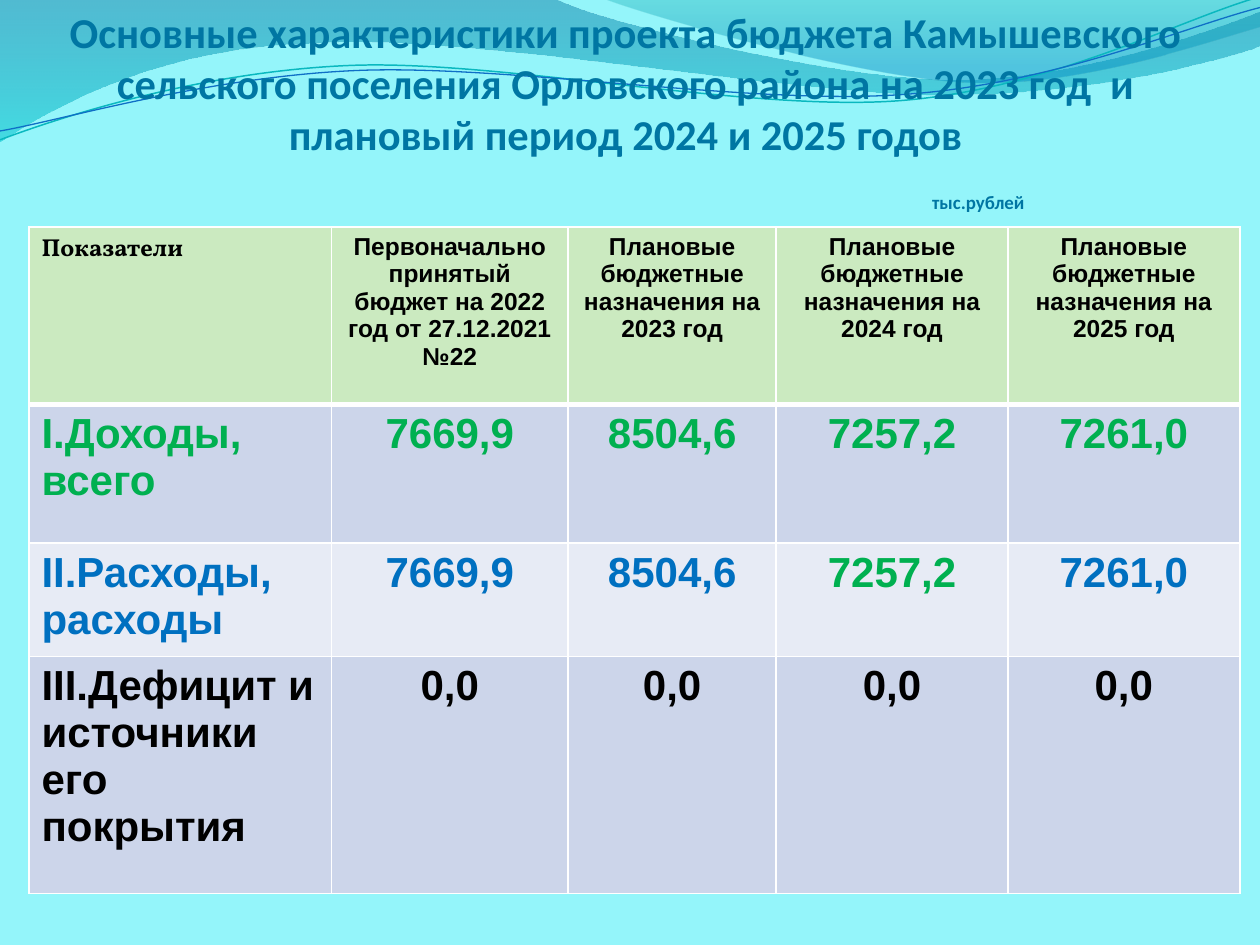
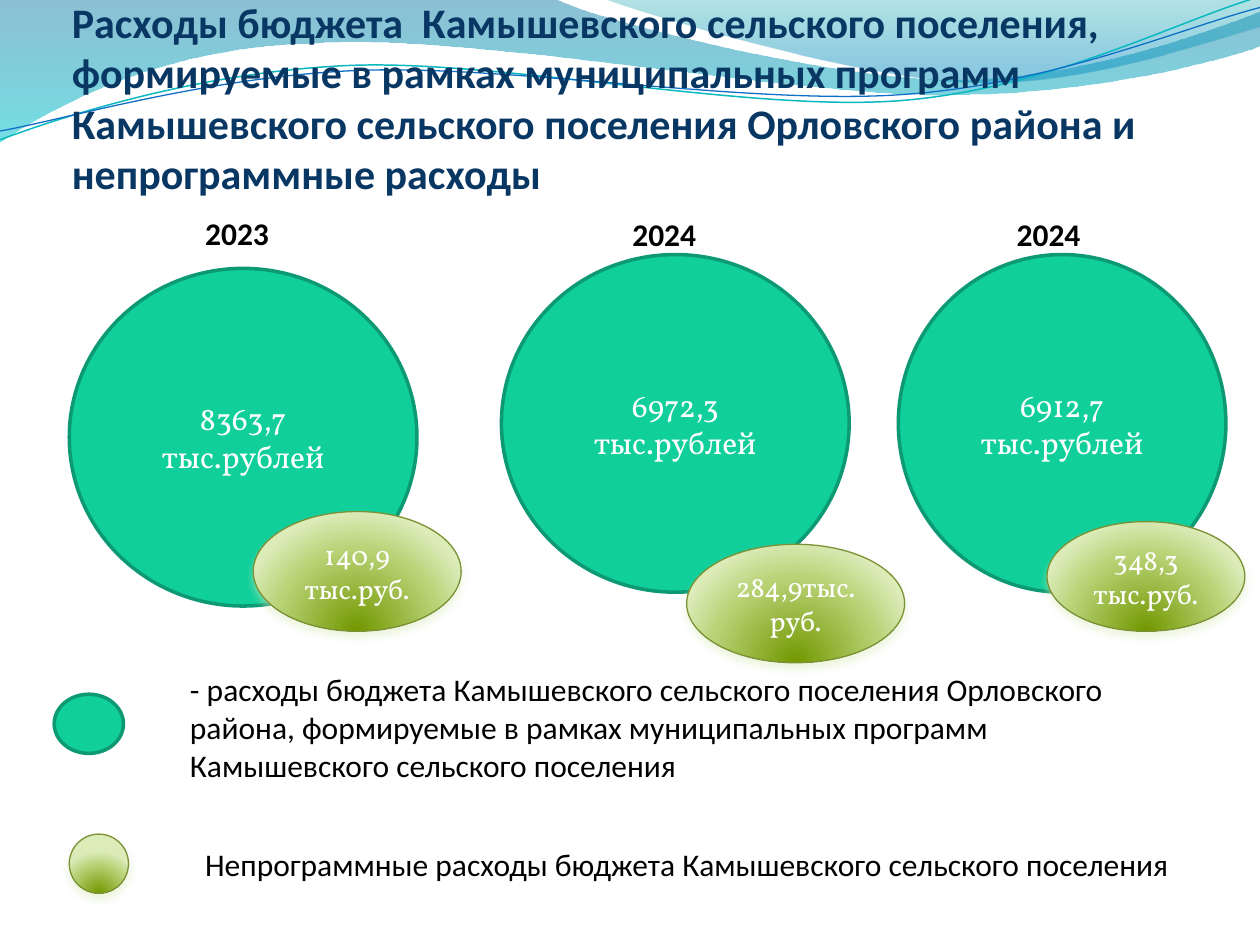
from math import cos, radians, sin

from pptx import Presentation
from pptx.dml.color import RGBColor as Rgb
from pptx.enum.shapes import MSO_SHAPE as Kind
from pptx.enum.text import MSO_ANCHOR as Anchor, PP_ALIGN as Align
from pptx.oxml import parse_xml as to_xml
from pptx.util import Inches, Pt

WIDE, HIGH = Inches(10), Inches(7.5)
COLS = 10
UNIT = WIDE // COLS
TILT = 357.3
NS = 'xmlns:a="http://schemas.openxmlformats.org/drawingml/2006/main"'

HUE = {
    "aqua": "94F5FA", "white": "FFFFFF", "black": "000000",
    "title": "0076A3", "navy": "083763",
    "deep": "0074A1", "cyan": "00C6CF", "teal": "00A1A9", "sky": "008BBF",
    "wave": "0AB8BF", "blue": "0F6FC6",
    "head": "CBEAC0", "odd": "CCD5EA", "even": "E7EBF5",
    "gain": "00B050", "cost": "0070C0",
    "mint": "10CF9B", "rim": "0C9973",
    "olive": "729800", "lime": "B8D275", "pale": "DBECB9", "edge": "7B9135",
}

FONT = {
    "main": {"name": "Calibri", "size": Pt(24.3), "bold": True},
    "title": {"name": "Calibri", "size": Pt(24), "bold": True},
    "unit": {"name": "Calibri", "size": Pt(10.8), "bold": True},
    "year": {"name": "Calibri", "size": Pt(18), "bold": True},
    "note": {"name": "Calibri", "size": Pt(18)},
    "big": {"name": "Vollkorn", "size": Pt(18)},
    "small": {"name": "Vollkorn", "size": Pt(16)},
    "stub": {"name": "Vollkorn", "size": Pt(14), "bold": True},
    "head": {"name": "Arial", "size": Pt(14), "bold": True},
    "cell": {"name": "Arial", "size": Pt(24), "bold": True},
}

FRAME = {
    "title": {"vertical_anchor": Anchor.BOTTOM, "margin_left": 0,
              "margin_right": 0, "margin_top": Inches(0.05), "margin_bottom": 0},
    "mid": {"vertical_anchor": Anchor.MIDDLE},
    "top": {"vertical_anchor": Anchor.TOP},
}

DOWN = '<a:lin ang="5400000" scaled="1"/>'
GLOW = ('<a:path path="circle"><a:fillToRect l="50000" t="130000" '
        'r="50000" b="-30000"/></a:path>')
LEAF = [(0, "olive", 100), (68, "lime", 100), (100, "pale", 100)]

BANDS = [
    ([(0, 0), (4.4, -0.01), (4.76, 0.17, 6.64, 0.63, 7.58, 0.63),
      (8.53, 0.63, 9.58, 0.26, 10, 0.09), (10.01, 0.36),
      (9.83, 0.44, 8.7, 0.76, 7.46, 0.75), (6.22, 0.75, 3.82, 0.28, 2.57, 0.34),
      (1.29, 0.36, 0.46, 0.83, -0.01, 1.13), (0, 0)],
     [(0, "deep", 45), (100, "cyan", 55)]),
    ([(4.79, -0.01), (5.09, 0.11, 6.82, 0.62, 7.69, 0.65),
      (8.56, 0.69, 9.61, 0.32, 10, 0.21), (10, 0), (4.79, -0.01)],
     [(0, "teal", 30), (80, "sky", 45)]),
]
WAVES = [
    ([(0, 1.11), (0.48, 0.93, 1.58, 0.57, 2.77, 0.52),
      (3.95, 0.47, 5.93, 0.89, 7.13, 0.8), (8.33, 0.71, 9.38, 0.15, 9.98, -0.02)],
     (4.99, 0.57), "wave", 0.85),
    ([(0, 1.04), (0.47, 0.96, 1.64, 0.61, 2.83, 0.56),
      (4.03, 0.51, 5.97, 0.84, 7.17, 0.75), (8.36, 0.67, 9.41, 0.21, 10, 0.06)],
     (5, 0.59), "blue", 0.75),
]

HEADS = ["Показатели", "Первоначально принятый бюджет на 2022 год от 27.12.2021 №22"]
HEADS += [f"Плановые бюджетные назначения на {year} год" for year in (2023, 2024, 2025)]
SUMS = ["7669,9", "8504,6", "7257,2", "7261,0"]
ROWS = [
    (["I.Доходы, всего"] + SUMS, "odd", ["gain"] * 5),
    (["II.Расходы, расходы"] + SUMS, "even", ["cost"] * 3 + ["gain", "cost"]),
    (["III.Дефицит и источники его покрытия"] + ["0,0"] * 4, "odd", ["black"] * 5),
]
SPANS = [2.4, 1.88, 1.65, 1.84, 1.84]
TALLS = [1.41, 1.1, 0.81, 1.88]

YEARS = [
    ((0.55, 2.13, 2.76, 2.68), "2023", (0.98, -0.48), ["8363,7 тыс.рублей"],
     (1.46, 1.93, 1.65, 0.95), ["140,9 тыс.руб."]),
    ((3.98, 2.02, 2.76, 2.68), "2024", (0.94, -0.36), ["6972,3 тыс.рублей"],
     (1.47, 2.3, 1.73, 0.94), ["284,9тыс.", "руб."]),
    ((7.13, 2.02, 2.6, 2.68), "2024", (0.84, -0.36), ["6912,7 тыс.рублей"],
     (1.18, 2.12, 1.57, 0.87), ["348,3", "тыс.руб."]),
]


def tint(name):
    return Rgb.from_string(HUE[name])


def emu(box):
    return [round(n * UNIT) for n in box]


def inner(box, x, y, w, h):
    return box[0] + x, box[1] + y, w, h


def apply(item, form):
    for key, value in form.items():
        setattr(item, key, value)


def write(frame, lines, font, hue, align=Align.LEFT):
    for spot, line in enumerate(lines):
        para = frame.paragraphs[0] if spot == 0 else frame.add_paragraph()
        para.alignment = align
        run = para.add_run()
        run.text = line
        apply(run.font, FONT[font])
        run.font.color.rgb = tint(hue)


def label(slide, box, text, font, hue, align=Align.LEFT, frame="top"):
    body = slide.shapes.add_textbox(*emu(box)).text_frame
    body.word_wrap = True
    apply(body, FRAME[frame])
    write(body, [text], font, hue, align)
    return body


def blend(shape, stops, mode):
    shape.fill.gradient()
    old = shape.fill._xPr.gradFill
    marks = "".join(
        f'<a:gs pos="{at * 1000}"><a:srgbClr val="{HUE[hue]}">'
        f'<a:alpha val="{alpha * 1000}"/></a:srgbClr></a:gs>'
        for at, hue, alpha in stops)
    new = to_xml(f'<a:gradFill {NS} rotWithShape="1"><a:gsLst>{marks}</a:gsLst>{mode}</a:gradFill>')
    old.getparent().replace(old, new)


def outline(shape, hue, width):
    shape.line.color.rgb = tint(hue)
    shape.line.width = Pt(width)


def pairs(node):
    return list(zip(node[::2], node[1::2]))


def level(nodes, hub):
    turn = radians(360 - TILT)
    flat = []
    for node in nodes:
        dots = []
        for x, y in pairs(node):
            dx, dy = x - hub[0], y - hub[1]
            dots += [hub[0] + dx * cos(turn) - dy * sin(turn),
                     hub[1] + dx * sin(turn) + dy * cos(turn)]
        flat.append(tuple(dots))
    return flat


def curve(slide, nodes, close):
    dots = [emu(node[-2:]) for node in nodes]
    pen = slide.shapes.build_freeform(*dots[0])
    pen.add_line_segments(dots[1:], close=close)
    shape = pen.convert_to_shape()
    shape.shadow.inherit = False
    track = shape._element.spPr.find(".//{*}path")
    for old, node in zip(track.findall("{*}lnTo"), nodes[1:]):
        if len(node) == 6:
            marks = "".join(
                f'<a:pt x="{x - shape.left}" y="{y - shape.top}"/>'
                for x, y in map(emu, pairs(node)))
            track.replace(old, to_xml(f'<a:cubicBezTo {NS}>{marks}</a:cubicBezTo>'))
    return shape


def banner(slide):
    for nodes, stops in BANDS:
        band = curve(slide, nodes, True)
        blend(band, stops, DOWN)
        band.line.fill.background()
    for nodes, hub, hue, width in WAVES:
        wave = curve(slide, level(nodes, hub), False)
        wave.rotation = TILT
        wave.fill.background()
        outline(wave, hue, width)


def start(deck, back):
    slide = deck.slides.add_slide(deck.slide_layouts[6])
    fill = slide.background.fill
    fill.solid()
    fill.fore_color.rgb = tint(back)
    banner(slide)
    return slide


def disc(slide, box, lines=()):
    oval = slide.shapes.add_shape(Kind.OVAL, *emu(box))
    oval.shadow.inherit = False
    oval.fill.solid()
    oval.fill.fore_color.rgb = tint("mint")
    outline(oval, "rim", 2)
    apply(oval.text_frame, FRAME["mid"])
    write(oval.text_frame, lines, "big", "white", Align.CENTER)


def drop(slide, box, lines=()):
    oval = slide.shapes.add_shape(Kind.OVAL, *emu(box))
    oval.shadow.inherit = False
    blend(oval, LEAF, GLOW)
    outline(oval, "edge", 0.75)
    glow = to_xml(
        f'<a:outerShdw {NS} blurRad="{Pt(4.5)}" dist="{Pt(3)}" dir="5400000" rotWithShape="0">'
        f'<a:srgbClr val="{HUE["pale"]}"><a:alpha val="48000"/></a:srgbClr></a:outerShdw>')
    oval._element.spPr.find("{*}effectLst").append(glow)
    apply(oval.text_frame, FRAME["mid"])
    write(oval.text_frame, lines, "small", "white", Align.CENTER)


def border(cell, base):
    props = cell._tc.get_or_add_tcPr()
    sides = {"lnL": 1, "lnR": 1, "lnT": 1, "lnB": base}
    for spot, (side, width) in enumerate(sides.items()):
        props.insert(spot, to_xml(
            f'<a:{side} {NS} w="{Pt(width)}"><a:solidFill>'
            f'<a:srgbClr val="{HUE["white"]}"/></a:solidFill></a:{side}>'))


def budget(slide, box):
    holder = slide.shapes.add_table(len(TALLS), len(SPANS), *emu(box))
    grid = holder.table
    for col, span in zip(grid.columns, SPANS):
        col.width = round(span * UNIT)
    for row, tall in zip(grid.rows, TALLS):
        row.height = round(tall * UNIT)
    holder.height = round(box[3] * UNIT)
    lines = [(HEADS, "head", ["black"] * 5)] + ROWS
    for r, (texts, back, hues) in enumerate(lines):
        for c, (text, hue) in enumerate(zip(texts, hues)):
            cell = grid.cell(r, c)
            cell.fill.solid()
            cell.fill.fore_color.rgb = tint(back)
            border(cell, 1 if r else 3)
            font = "cell" if r else "head" if c else "stub"
            write(cell.text_frame, [text], font, hue, Align.CENTER if c else Align.LEFT)


def heading(slide, box):
    body = label(slide, box,
                 "Основные характеристики проекта бюджета Камышевского сельского поселения "
                 "Орловского района на 2023 год  и плановый период 2024 и 2025 годов",
                 "main", "title", Align.CENTER, "title")
    body.margin_bottom = Inches(0.24)
    para = body.add_paragraph()
    apply(para, {"alignment": Align.CENTER, "space_before": Pt(18)})
    para._p.get_or_add_pPr().set("marL", str(Inches(5.6)))
    run = para.add_run()
    run.text = "тыс.рублей"
    apply(run.font, FONT["unit"])
    run.font.color.rgb = tint("title")


def years(slide):
    for box, _, _, total, _, _ in YEARS:
        disc(slide, box, total)
    for box, _, _, _, part, rest in YEARS:
        drop(slide, inner(box, *part), rest)


def legend(slide, box):
    disc(slide, inner(box, 0, 0.24, 0.55, 0.47))
    drop(slide, inner(box, 0.12, 1.35, 0.47, 0.47))
    for ring, year, spot, _, _, _ in YEARS:
        label(slide, inner(ring, *spot, 0.79, 0.4), year, "year", "black")
    label(slide, inner(box, 1.1, 1.39, 8.47, 0.4),
          "Непрограммные расходы бюджета Камышевского сельского поселения", "note", "black")
    label(slide, inner(box, 0.98, 0, 8.07, 1.31),
          "- расходы бюджета Камышевского сельского поселения Орловского района, "
          "формируемые в рамках муниципальных программ Камышевского сельского поселения",
          "note", "black")


def main():
    deck = Presentation()
    deck.slide_width, deck.slide_height = WIDE, HIGH
    first = start(deck, "aqua")
    heading(first, (0.43, 0.21, 9.07, 1.72))
    budget(first, (0.23, 1.8, 9.61, 5.29))
    second = start(deck, "white")
    label(second, (0.57, 0.32, 9.08, 1.25),
          "Расходы бюджета  Камышевского сельского поселения, формируемые в рамках "
          "муниципальных программ Камышевского сельского поселения Орловского района "
          "и непрограммные расходы", "title", "navy", Align.LEFT, "title")
    years(second)
    legend(second, (0.43, 5.27, 9.05, 1.87))
    deck.save("out.pptx")


if __name__ == "__main__":
    main()
